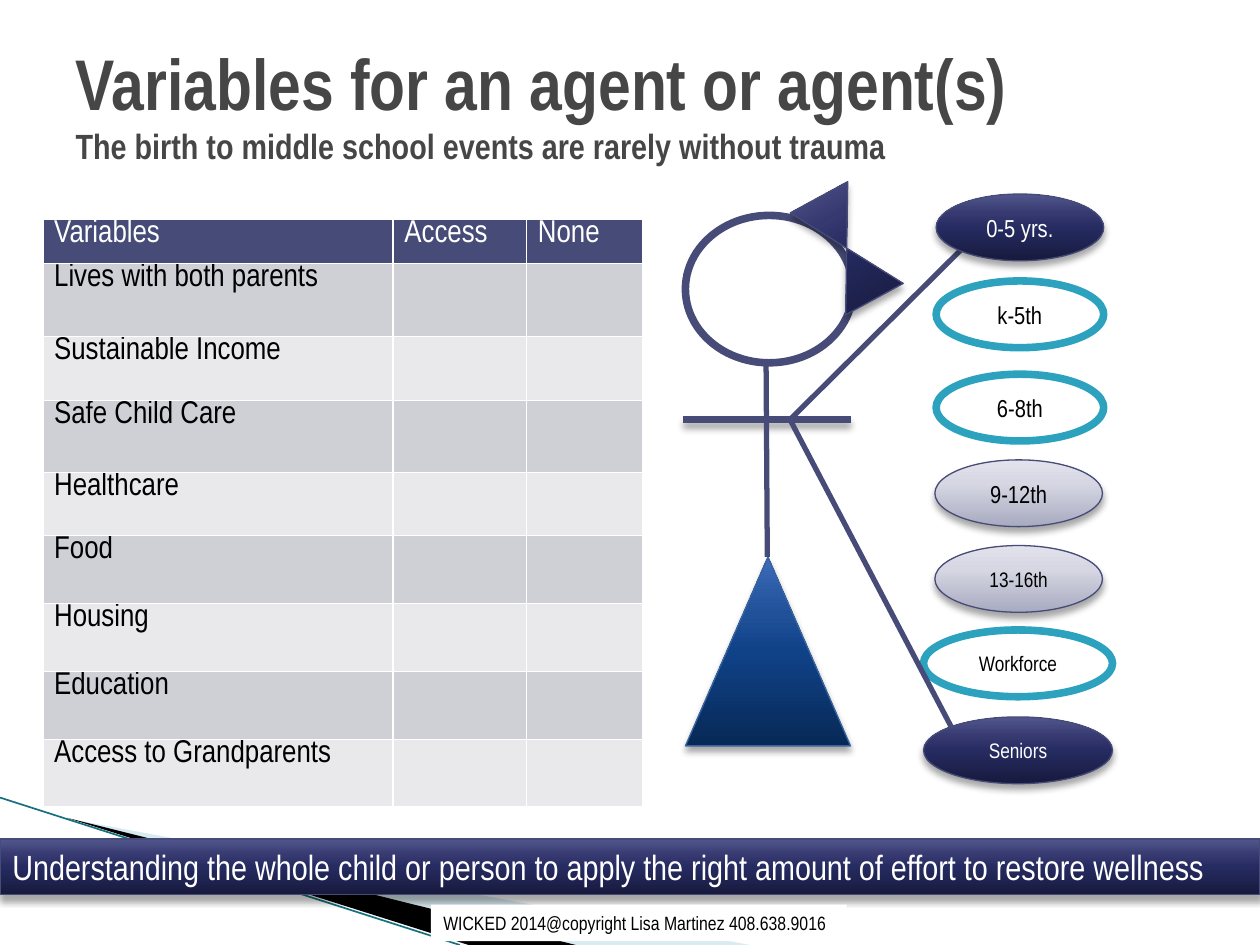
from typing import NamedTuple, Optional, Sequence

from lxml.etree import SubElement
from pptx import Presentation
from pptx.dml.color import RGBColor
from pptx.enum.shapes import MSO_CONNECTOR, MSO_SHAPE as Shape
from pptx.enum.text import MSO_ANCHOR as Anchor, PP_ALIGN as Align
from pptx.oxml.ns import qn
from pptx.util import Pt

PX = 9144  # 100 px to the inch
FONT = "Arial Narrow"
INDIGO, TEAL, WHITE, BLACK = "474B78", "2DA2BF", "FFFFFF", "000000"
DARK = [(0, "171A3D"), (50, "262B61"), (70, "353970"), (100, "51568D")]
PALE = [(0, "A8AAC0"), (65, "D6D7E3"), (100, "E2E2EC")]
BLUE = [(0, "072956"), (50, "104288"), (70, "205199"), (100, "3D6BB9")]


class Box(NamedTuple):
    x: int
    y: int
    w: int
    h: int


class Style(NamedTuple):
    fill: object  # hex string, or gradient stops from bottom to top
    line: Optional[str] = INDIGO
    width: float = 0.75
    shadow: bool = True
    ink: str = WHITE


class Stage(NamedTuple):
    text: str
    box: Box
    style: Style
    size: int


class Link(NamedTuple):
    x1: int
    y1: int
    x2: int
    y2: int
    color: str = INDIGO
    width: float = 3
    shadow: bool = False


def rgb(value: str) -> RGBColor:
    return RGBColor.from_string(value)


def emu(values: Sequence[int]) -> list:
    return [v * PX for v in values]


def solid(fill, color: str) -> None:
    fill.solid()
    fill.fore_color.rgb = rgb(color)


def set_font(p, size: float, color: str, bold: bool = False) -> None:
    p.font.name, p.font.size, p.font.bold = FONT, Pt(size), bold
    p.font.color.rgb = rgb(color)


def set_effects(spPr, shadow: bool) -> None:
    effects = SubElement(spPr, qn("a:effectLst"))
    if shadow:
        outer = SubElement(effects, qn("a:outerShdw"), blurRad=str(Pt(4)), dist=str(Pt(3)),
                           dir="5400000", rotWithShape="0")
        color = SubElement(outer, qn("a:srgbClr"), val=BLACK)
        SubElement(color, qn("a:alpha"), val="35000")


def set_gradient(sp, stops: list) -> None:
    sp.fill.gradient()
    sp.fill.gradient_angle = 90
    gs_list = sp._element.spPr.find(qn("a:gradFill")).find(qn("a:gsLst"))
    for gs in list(gs_list):
        gs_list.remove(gs)
    for pos, color in stops:
        gs = SubElement(gs_list, qn("a:gs"), pos=str(pos * 1000))
        SubElement(gs, qn("a:srgbClr"), val=color)


def apply_style(sp, style: Style) -> None:
    if isinstance(style.fill, str):
        solid(sp.fill, style.fill)
    else:
        set_gradient(sp, style.fill)
    if style.line:
        sp.line.color.rgb = rgb(style.line)
        sp.line.width = Pt(style.width)
    else:
        sp.line.fill.background()
    set_effects(sp._element.spPr, style.shadow)


def draw_shape(s, kind, box: Box, style: Style, text: str = "", size: int = 12,
               align=Align.CENTER, anchor=Anchor.MIDDLE):
    sp = s.shapes.add_shape(kind, *emu(box))
    apply_style(sp, style)
    if text:
        tf = sp.text_frame
        tf.vertical_anchor = anchor
        p = tf.paragraphs[0]
        p.text, p.alignment = text, align
        set_font(p, size, style.ink)
    return sp


def draw_link(s, link: Link) -> None:
    c = s.shapes.add_connector(MSO_CONNECTOR.STRAIGHT, *emu(link[:4]))
    c.line.color.rgb = rgb(link.color)
    c.line.width = Pt(link.width)
    set_effects(c._element.spPr, link.shadow)


def draw_sweep(s, points: list, color: str, alpha: int = 100) -> None:
    builder = s.shapes.build_freeform(*points[0], scale=PX)
    builder.add_line_segments(points[1:], close=True)
    sp = builder.convert_to_shape()
    apply_style(sp, Style(color, None, shadow=False))
    if alpha < 100:
        clr = sp._element.spPr.find(qn("a:solidFill"))[0]
        SubElement(clr, qn("a:alpha"), val=str(alpha * 1000))


def set_borders(cell, color: str, width: float) -> None:
    tcPr = cell._tc.get_or_add_tcPr()
    for side in ("lnL", "lnR", "lnT", "lnB"):
        ln = SubElement(tcPr, qn(f"a:{side}"), w=str(Pt(width)))
        SubElement(SubElement(ln, qn("a:solidFill")), qn("a:srgbClr"), val=color)


def draw_table(s, x: int, y: int, cols: list, heights: list, rows: list) -> None:
    box = Box(x, y, sum(cols), sum(heights))
    table = s.shapes.add_table(len(rows), len(cols), *emu(box)).table
    for col, w in zip(table.columns, cols):
        col.width = w * PX
    for i, (row, h, texts) in enumerate(zip(table.rows, heights, rows)):
        row.height = h * PX
        fill = INDIGO if i == 0 else ("E9E9EC", "CFD0D6")[i % 2]
        for cell, text in zip(row.cells, texts):
            set_borders(cell, WHITE, 1)
            solid(cell.fill, fill)
            cell.margin_left = 9 * PX
            cell.margin_top = cell.margin_bottom = 0
            p = cell.text_frame.paragraphs[0]
            p.text = text
            set_font(p, 18, BLACK if i else WHITE)


def main() -> None:
    prs = Presentation()
    prs.slide_width, prs.slide_height = emu((1000, 750))
    s = prs.slides.add_slide(prs.slide_layouts[5])

    # Corner sweeps
    draw_sweep(s, [(55, 650), (595, 750), (456, 750)], "A0CBDC", 40)
    draw_sweep(s, [(53, 649), (457, 750), (372, 750)], BLACK)
    draw_link(s, Link(0, 633, 365, 750, "16707F", 0.95))

    # Title and subtitle
    title = s.shapes.title
    title.left, title.top, title.width, title.height = emu(Box(50, 19, 900, 125))
    tf = title.text_frame
    tf.vertical_anchor = Anchor.MIDDLE
    p = tf.paragraphs[0]
    p.text = ("Variables for an agent or agent(s)\v"
              "The birth to middle school events are rarely without trauma")
    p.alignment = Align.LEFT
    set_font(p, 41, "464646", True)
    p.runs[1].font.size = Pt(20)

    # Variables table
    variables = ["Lives with both parents", "Sustainable Income", "Safe Child Care", "Healthcare",
                 "Food", "Housing", "Education", "Access to Grandparents"]
    draw_table(s, 34, 174, [278, 106, 92], [35, 58, 51, 57, 50, 54, 54, 54, 53],
               [("Variables", "Access", "None")] + [(v, "", "") for v in variables])

    # Stick figure
    ring = Style(WHITE, TEAL, 4.33, False, BLACK)
    dark, pale = Style(DARK), Style(PALE, ink=BLACK)
    draw_shape(s, Shape.OVAL, Box(544, 171, 133, 117), ring._replace(line=INDIGO))
    draw_link(s, Link(542, 333, 675, 333, width=4.33, shadow=True))
    draw_shape(s, Shape.ISOSCELES_TRIANGLE, Box(544, 442, 131, 150), Style(BLUE, "39639D"))
    bow = draw_shape(s, Shape.FLOWCHART_COLLATE, Box(646, 151, 52, 92), dark)
    bow.rotation = 331.4
    draw_link(s, Link(762, 199, 627, 333))
    draw_link(s, Link(608, 288, 609, 442))

    # Life stages
    for stage in (
        Stage("0-5 yrs.", Box(743, 154, 133, 53), dark, 14),
        Stage("k-5th", Box(743, 223, 133, 53), ring, 14),
        Stage("6-8th", Box(743, 297, 133, 53), ring, 14),
        Stage("9-12th", Box(742, 365, 133, 53), pale, 14),
        Stage("13-16th", Box(742, 433, 133, 53), pale, 12),
        Stage("Workforce", Box(733, 500, 150, 53), ring, 12),
        Stage("Seniors", Box(733, 569, 150, 53), dark, 12),
    ):
        draw_shape(s, Shape.OVAL, stage.box, stage.style, stage.text, stage.size)

    # Message band, link to the last stage, and copyright line
    draw_shape(s, Shape.RECTANGLE, Box(0, 666, 1000, 44), dark,
               "Understanding the whole child or person to apply the right amount of effort "
               "to restore wellness", 20, Align.LEFT, Anchor.TOP)
    draw_link(s, Link(627, 333, 755, 577))
    draw_shape(s, Shape.RECTANGLE, Box(342, 718, 330, 29), Style(WHITE, None, 0, False, BLACK),
               "WICKED 2014@copyright Lisa Martinez 408.638.9016", 11, Align.LEFT, Anchor.TOP)

    prs.save("out.pptx")


if __name__ == "__main__":
    main()
